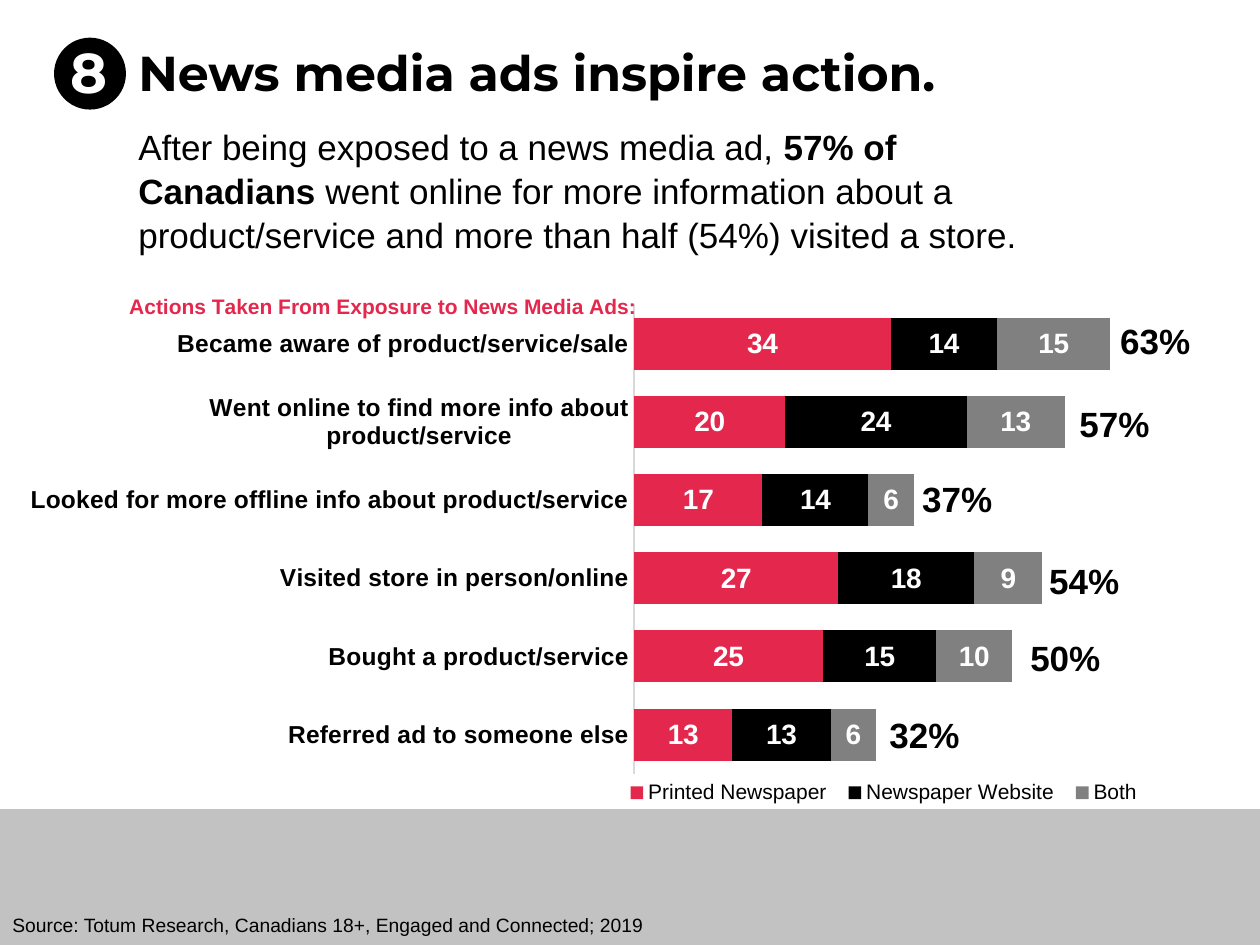
from dataclasses import dataclass

from lxml import etree
from pptx import Presentation
from pptx.chart.data import CategoryChartData
from pptx.dml.color import RGBColor
from pptx.enum import chart as charts, shapes, text
from pptx.oxml import ns
from pptx.util import Cm, Pt


@dataclass(frozen=True)
class Theme:
    black: str = "000000"
    white: str = "FFFFFF"
    red: str = "E4284D"
    gray: str = "808080"
    band: str = "C2C2C2"
    axis: str = "D9D9D9"
    body: str = "Arial"
    heading: str = "Montserrat"
    number_size: int = 32
    title_size: int = 28
    body_size: int = 20
    value_size: int = 16
    category_size: int = 14
    legend_size: int = 12
    source_size: int = 11


THEME = Theme()

# Action, (printed, website, both), left and top of its total within the chart box
ACTIONS = [
    ("Became aware of product/service/sale", (34, 14, 15), 21.87, 0.91),
    ("Went online to find more info about product/service", (20, 24, 13), 21.05, 2.57),
    ("Looked for more offline info about product/service", (17, 14, 6), 17.88, 4.09),
    ("Visited store in person/online", (27, 18, 9), 20.44, 5.74),
    ("Bought a product/service", (25, 15, 10), 20.06, 7.29),
    ("Referred ad to someone else", (13, 13, 6), 17.22, 8.84),
]
SERIES = [
    ("Printed Newspaper", THEME.red),
    ("Newspaper Website", THEME.black),
    ("Both", THEME.gray),
]


def style_font(font, size, color=THEME.black, bold=False, name=THEME.body):
    font.size = Pt(size)
    font.bold = bold
    font.name = name
    font.color.rgb = RGBColor.from_string(color)


def add_text(slide, box, runs, size, color=THEME.black, name=THEME.body, wrap=True,
             anchor=text.MSO_ANCHOR.TOP):
    """Add a one-paragraph text box; runs are (wording, bold) pairs."""
    text_frame = slide.shapes.add_textbox(*map(Cm, box)).text_frame
    text_frame.word_wrap = wrap
    text_frame.vertical_anchor = anchor
    paragraph = text_frame.paragraphs[0]
    for wording, bold in runs:
        run = paragraph.add_run()
        run.text = wording
        style_font(run.font, size, color, bold, name)
    return paragraph


def add_plain_shape(slide, kind, box, color):
    shape = slide.shapes.add_shape(kind, *map(Cm, box))
    shape.shadow.inherit = False
    shape.fill.solid()
    shape.fill.fore_color.rgb = RGBColor.from_string(color)
    shape.line.fill.background()


def set_layout(parent, index, inner=False, **fractions):
    """Place a chart part by fractions of the chart area."""
    for old in parent.findall(ns.qn("c:layout")):
        parent.remove(old)
    layout = etree.Element(ns.qn("c:layout"))
    manual = etree.SubElement(layout, ns.qn("c:manualLayout"))
    settings = {"layoutTarget": "inner"} if inner else {}
    settings.update(xMode="edge", yMode="edge", **fractions)
    for tag, value in settings.items():
        etree.SubElement(manual, ns.qn(f"c:{tag}")).set("val", str(value))
    parent.insert(index, layout)


def add_header(slide, box):
    left, top, width, height = box
    add_plain_shape(slide, shapes.MSO_SHAPE.OVAL, (left, top + 0.43, 1.45, 1.45), THEME.black)
    add_text(slide, (left + 0.08, top + 0.3, 1.68, 1.63), [("8", True)],
             THEME.number_size, THEME.white, THEME.heading)
    add_text(slide, (left + 1.45, top, width - 1.45, 2.24),
             [("News media ads inspire action.", True)], THEME.title_size,
             name=THEME.heading, anchor=text.MSO_ANCHOR.MIDDLE)
    paragraph = add_text(slide, (left + 1.45, top + 2.03, width - 1.45, height - 2.03), [
        ("After being exposed to a news media ad, ", False),
        ("57% of Canadians ", True),
        ("went online for more information about a product/service "
         "and more than half (54%) visited a store.", False),
    ], THEME.body_size)
    paragraph.line_spacing = 1.05


def add_actions_chart(slide, box):
    data = CategoryChartData()
    rows = ACTIONS[::-1]
    data.categories = [row[0] for row in rows]
    for index, (name, _) in enumerate(SERIES):
        data.add_series(name, [row[1][index] for row in rows])
    chart = slide.shapes.add_chart(
        charts.XL_CHART_TYPE.BAR_STACKED, *map(Cm, box), data).chart
    style_font(chart.font, 10)

    chart.has_title = True
    title_frame = chart.chart_title.text_frame
    title_frame.text = "Actions Taken From Exposure to News Media Ads:"
    style_font(title_frame.paragraphs[0].runs[0].font, THEME.legend_size, THEME.red, True)

    chart.has_legend = True
    chart.legend.position = charts.XL_LEGEND_POSITION.BOTTOM
    chart.legend.include_in_layout = False
    style_font(chart.legend.font, THEME.legend_size)

    category_axis = chart.category_axis
    category_axis.major_tick_mark = charts.XL_TICK_MARK.NONE
    style_font(category_axis.tick_labels.font, THEME.category_size, bold=True)
    category_axis.format.line.color.rgb = RGBColor.from_string(THEME.axis)
    category_axis.format.line.width = Pt(0.75)
    value_axis = chart.value_axis
    value_axis.visible = False
    value_axis.has_major_gridlines = False
    value_axis.minimum_scale, value_axis.maximum_scale = 0, 70

    plot = chart.plots[0]
    plot.gap_width, plot.overlap = 50, 100
    plot.vary_by_categories = False
    for series, (_, color) in zip(plot.series, SERIES):
        series.format.fill.solid()
        series.format.fill.fore_color.rgb = RGBColor.from_string(color)
        series.data_labels.show_value = True
        style_font(series.data_labels.font, THEME.value_size, THEME.white, True)

    title, = chart.element.xpath("c:chart/c:title")
    legend, = chart.element.xpath("c:chart/c:legend")
    plot_area, = chart.element.xpath("c:chart/c:plotArea")
    set_layout(title, 1, x=0.09, y=0.04)
    set_layout(legend, 1, x=0.52, y=0.94, w=0.47, h=0.06)
    set_layout(plot_area, 0, inner=True, x=0.536, y=0.067, w=0.464, h=0.868)


def add_totals(slide, box):
    for _, values, left, top in ACTIONS:
        add_text(slide, (box[0] + left, box[1] + top, 1.93, 1.12),
                 [(f"{sum(values)}%", True)], THEME.body_size, wrap=False)


def add_footer(slide, box):
    left, top, _, height = box
    add_plain_shape(slide, shapes.MSO_SHAPE.RECTANGLE, box, THEME.band)
    add_text(slide, (left, top + height - 0.76, 13.36, 0.74),
             [("Source: Totum Research, Canadians 18+, Engaged and Connected; 2019", False)],
             THEME.source_size, wrap=False)


def main():
    presentation = Presentation()
    presentation.slide_width, presentation.slide_height = Cm(25.4), Cm(19.05)
    slide = presentation.slides.add_slide(presentation.slide_layouts[6])
    chart_box = (0.46, 5.41, 22.99, 10.9)
    add_footer(slide, (0, 16.31, 25.4, 2.74))
    add_header(slide, (1.09, 0.33, 20.27, 5.1))
    add_actions_chart(slide, chart_box)
    add_totals(slide, chart_box)
    presentation.save("out.pptx")


if __name__ == "__main__":
    main()
